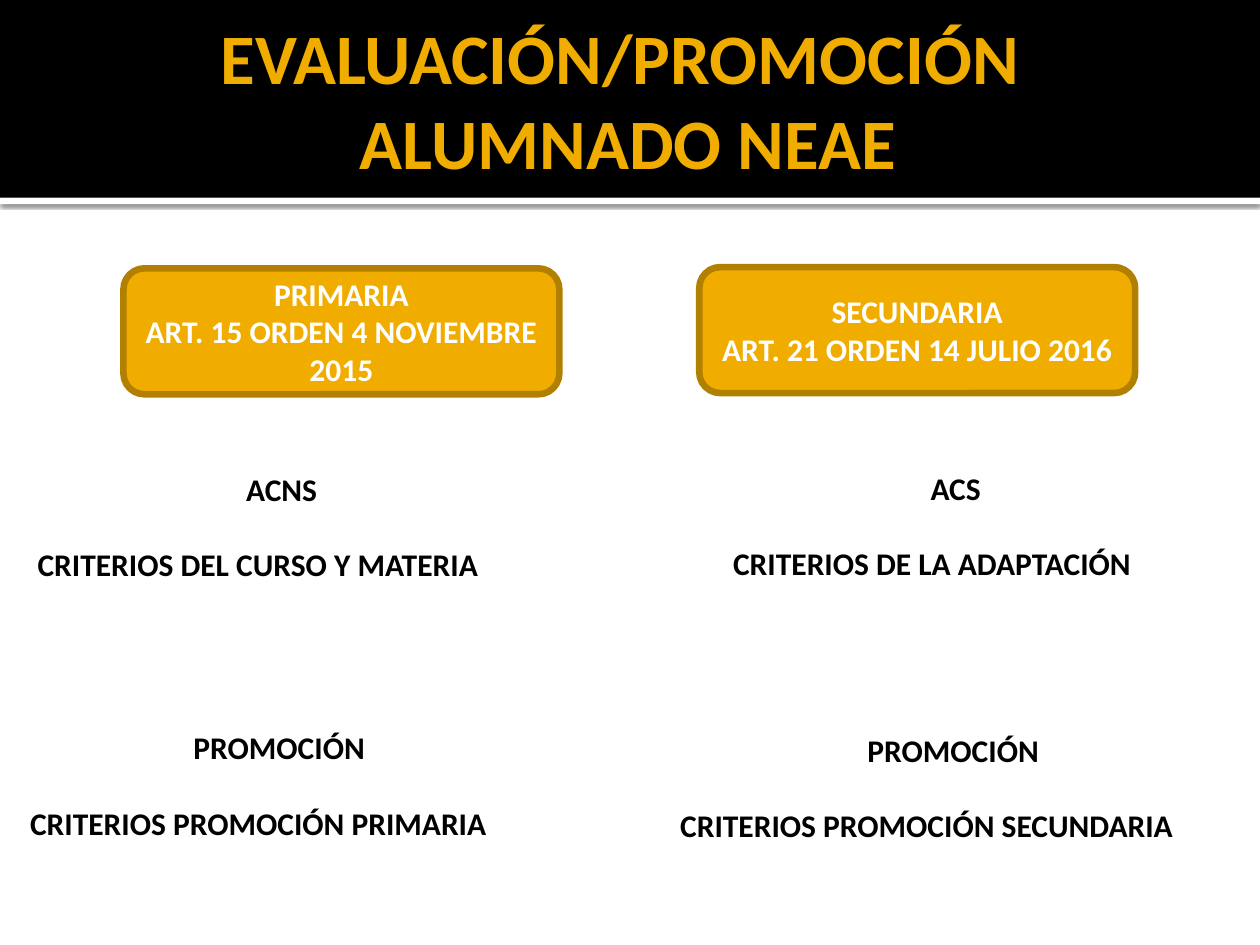
from lxml.etree import SubElement
from pptx import Presentation
from pptx.dml.color import RGBColor
from pptx.enum.shapes import MSO_SHAPE
from pptx.enum.text import MSO_ANCHOR, MSO_AUTO_SIZE, PP_ALIGN
from pptx.oxml.ns import qn
from pptx.util import Inches, Pt

GOLD, DARK_GOLD, BLACK, WHITE = "F0AD00", "B28000", "000000", "FFFFFF"
BODY_SIZE = 18


def color(value):
    return RGBColor.from_string(value)


def lengths(box):
    return [Inches(value) for value in box]


def add_span(para, text, size, shade):
    span = para.add_run()
    span.text = text
    span.font.name = "Calibri"
    span.font.size = Pt(size)
    span.font.bold = True
    span.font.color.rgb = color(shade)


def add_panel(page, kind, box, fill):
    panel = page.shapes.add_shape(kind, *lengths(box))
    panel.shadow.inherit = False
    panel.fill.solid()
    panel.fill.fore_color.rgb = color(fill)
    panel.line.fill.background()
    return panel


def add_bottom_shadow(panel):
    effects = panel.element.spPr.find(qn("a:effectLst"))
    shadow = SubElement(effects, qn("a:outerShdw"), blurRad=str(Pt(2.5)),
                        dist=str(Pt(0.8)), dir="5400000", algn="tl", rotWithShape="0")
    shade = SubElement(shadow, qn("a:srgbClr"), val=BLACK)
    SubElement(shade, qn("a:alpha"), val="60000")


def add_header(page, box, lines):
    left, top, width, height = box
    add_bottom_shadow(add_panel(page, MSO_SHAPE.RECTANGLE, (left, top + height, width, 0.05), WHITE))
    add_panel(page, MSO_SHAPE.RECTANGLE, box, BLACK)
    title = page.shapes.title
    title.element.getparent().append(title.element)
    title.left, title.top, title.width, title.height = lengths(
        (left + 0.46, top + 0.1, width - 1, height - 0.2))
    frame = title.text_frame
    frame.auto_size = MSO_AUTO_SIZE.NONE
    frame.word_wrap = True
    frame.vertical_anchor = MSO_ANCHOR.MIDDLE
    frame.margin_left = Inches(0.1)
    frame.margin_top = frame.margin_right = frame.margin_bottom = Inches(0.05)
    para = frame.paragraphs[0]
    para.alignment = PP_ALIGN.CENTER
    for index, line in enumerate(lines):
        if index:
            para.add_line_break()
        add_span(para, line, 40.5, GOLD)


def add_stage(page, box, lines):
    stage = add_panel(page, MSO_SHAPE.ROUNDED_RECTANGLE, box, GOLD)
    stage.line.color.rgb = color(DARK_GOLD)
    stage.line.width = Pt(3.78)
    frame = stage.text_frame
    frame.word_wrap = True
    frame.vertical_anchor = MSO_ANCHOR.MIDDLE
    for index, line in enumerate(lines):
        para = frame.add_paragraph() if index else frame.paragraphs[0]
        para.alignment = PP_ALIGN.CENTER
        add_span(para, line, BODY_SIZE, WHITE)


def add_criteria(page, box, heading, detail):
    frame = page.shapes.add_textbox(*lengths(box)).text_frame
    frame.word_wrap = True
    first = frame.paragraphs[0]
    first.alignment = PP_ALIGN.CENTER
    add_span(first, heading, BODY_SIZE, BLACK)
    second = frame.add_paragraph()
    second.alignment = PP_ALIGN.LEFT
    second.space_before = Pt(21.6)
    add_span(second, detail, BODY_SIZE, BLACK)


def main():
    deck = Presentation()
    deck.slide_width, deck.slide_height = Inches(10), Inches(7.5)
    page = deck.slides.add_slide(deck.slide_layouts[5])
    add_header(page, (0, 0, 10, 1.57), ("EVALUACIÓN/PROMOCIÓN ", "ALUMNADO NEAE"))

    stages = (
        ((0.98, 2.13, 3.46, 1), ("PRIMARIA", "ART. 15 ORDEN 4 NOVIEMBRE 2015")),
        ((5.55, 2.12, 3.46, 1), ("SECUNDARIA", "ART. 21 ORDEN 14 JULIO 2016")),
    )
    for box, lines in stages:
        add_stage(page, box, lines)

    criteria = (
        ((0.2, 3.68, 4.07, 1.01), "ACNS", "CRITERIOS DEL CURSO Y MATERIA"),
        ((5.72, 3.67, 3.73, 1.01), "ACS", "CRITERIOS DE LA ADAPTACIÓN"),
        ((0.14, 5.73, 4.15, 1.01), "PROMOCIÓN", "CRITERIOS PROMOCIÓN PRIMARIA"),
        ((5.3, 5.75, 4.53, 1.01), "PROMOCIÓN", "CRITERIOS PROMOCIÓN SECUNDARIA"),
    )
    for box, heading, detail in criteria:
        add_criteria(page, box, heading, detail)

    deck.save("out.pptx")


if __name__ == "__main__":
    main()
